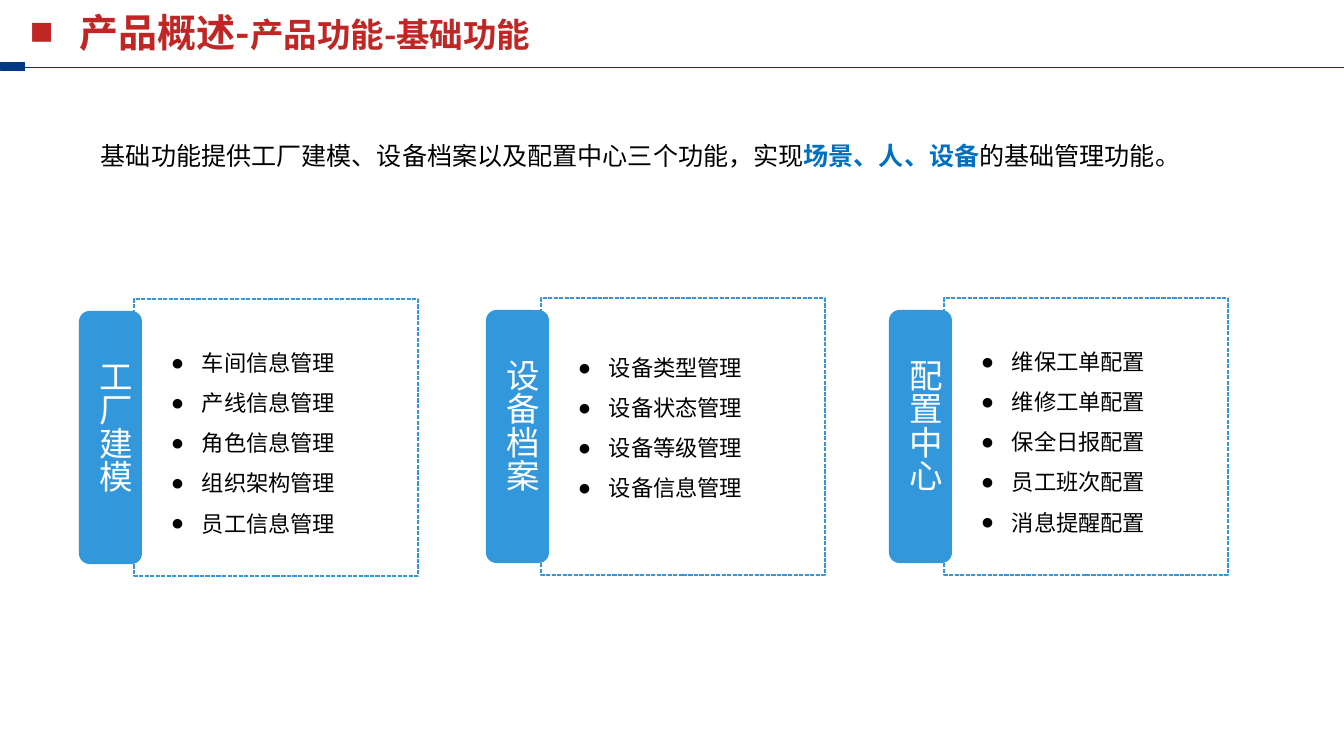
from lxml import etree
from pptx import Presentation
from pptx.dml.color import RGBColor
from pptx.enum.dml import MSO_LINE
from pptx.enum.shapes import MSO_CONNECTOR, MSO_SHAPE
from pptx.enum.text import MSO_ANCHOR
from pptx.oxml.ns import qn
from pptx.util import Emu, Pt

RECT, ROUNDED = MSO_SHAPE.RECTANGLE, MSO_SHAPE.ROUNDED_RECTANGLE
STRAIGHT = MSO_CONNECTOR.STRAIGHT
DASHED = MSO_LINE.SQUARE_DOT
TOP, MIDDLE = MSO_ANCHOR.TOP, MSO_ANCHOR.MIDDLE

FONT, BULLET_FONT = "Noto Sans CJK SC", "Arial"
NAVY, RED, BLUE, SKY = "013885", "C02624", "0070C0", "3398DB"
BLACK, WHITE = "000000", "FFFFFF"
PX = 9108  # EMU per px

# Content: runs are (text, size, colour, bold)
TITLE = [("产品概述-", 28, RED, True), ("产品功能-基础功能", 24, RED, True)]
SUMMARY = [
    ("基础功能提供工厂建模、设备档案以及配置中心三个功能，实现", 18, BLACK, False),
    ("场景、人、设备", 18, BLUE, True),
    ("的基础管理功能。", 18, BLACK, False),
]
# Cards: label, left, top, list offset from the panel top, items
CARDS = [
    ("工厂建模", 79, 299, 32,
     ["车间信息管理", "产线信息管理", "角色信息管理", "组织架构管理", "员工信息管理"]),
    ("设备档案", 486, 298, 38,
     ["设备类型管理", "设备状态管理", "设备等级管理", "设备信息管理"]),
    ("配置中心", 889, 298, 32,
     ["维保工单配置", "维修工单配置", "保全日报配置", "员工班次配置", "消息提醒配置"]),
]


def px(value):
    return Emu(value * PX)


def color(value):
    return RGBColor.from_string(value)


def add_box(kind, left, top, width, height, fill=None, line=None, weight=1):
    box = page.shapes.add_shape(kind, px(left), px(top), px(width), px(height))
    box.shadow.inherit = False
    if fill:
        box.fill.solid()
        box.fill.fore_color.rgb = color(fill)
    else:
        box.fill.background()
    if line:
        box.line.color.rgb = color(line)
        box.line.width = Pt(weight)
    else:
        box.line.fill.background()
    return box


def add_text(left, top, width, height, paragraphs, spacing=None, bullet=None,
             hang=0, first_indent=0, wrap=True, anchor=TOP):
    box = page.shapes.add_textbox(px(left), px(top), px(width), px(height))
    frame = box.text_frame
    frame.word_wrap = wrap
    frame.vertical_anchor = anchor
    for index, runs in enumerate(paragraphs):
        para = frame.paragraphs[0] if index == 0 else frame.add_paragraph()
        if spacing:
            para.line_spacing = spacing
        properties = para._p.get_or_add_pPr()
        properties.set("marL", str(px(hang)))
        properties.set("indent", str(px(first_indent - hang)))
        if bullet:
            etree.SubElement(properties, qn("a:buFont"), typeface=BULLET_FONT)
            etree.SubElement(properties, qn("a:buChar"), char=bullet)
        for text, size, ink, bold in runs:
            span = para.add_run()
            span.text = text
            span.font.size = Pt(size)
            span.font.bold = bold
            span.font.color.rgb = color(ink)
            span.font.name = FONT
            etree.SubElement(span._r.get_or_add_rPr(), qn("a:ea"), typeface=FONT)
    return box


def add_card(label, left, top, list_offset, items):
    panel_left, tab_top = left + 55, top + 12
    panel = add_box(RECT, panel_left, top, 284, 277, line=SKY)
    panel.line.dash_style = DASHED
    add_text(panel_left + 27, top + list_offset, 187, 12 + 40 * len(items),
             [[(item, 16, BLACK, False)] for item in items],
             spacing=1.5, bullet="●", hang=31, wrap=False)
    add_box(ROUNDED, left, tab_top, 63, 253, fill=SKY)
    name = add_text(left, tab_top + 39, 61, 146, [[(label, 24, WHITE, False)]], wrap=False)
    name.text_frame._txBody.bodyPr.set("vert", "eaVert")


deck = Presentation()
deck.slide_width, deck.slide_height = px(1344), px(751)
page = deck.slides.add_slide(deck.slide_layouts[6])

# Header rule and title
rule = page.shapes.add_connector(STRAIGHT, px(24), px(67), px(1344), px(67))
rule.line.color.rgb = color(NAVY)
rule.line.width = Pt(0.5)
etree.SubElement(rule._element.spPr, qn("a:effectLst"))
add_box(RECT, 1, 63, 24, 8, fill=NAVY, line=NAVY, weight=0.75)
add_text(20, 4, 833, 55, [TITLE], bullet="■", hang=50, anchor=MIDDLE)

# Summary sentence
add_text(62, 120, 1163, 56, [SUMMARY], spacing=1.5, first_indent=29)

# Function cards
for card in CARDS:
    add_card(*card)

deck.save("out.pptx")
